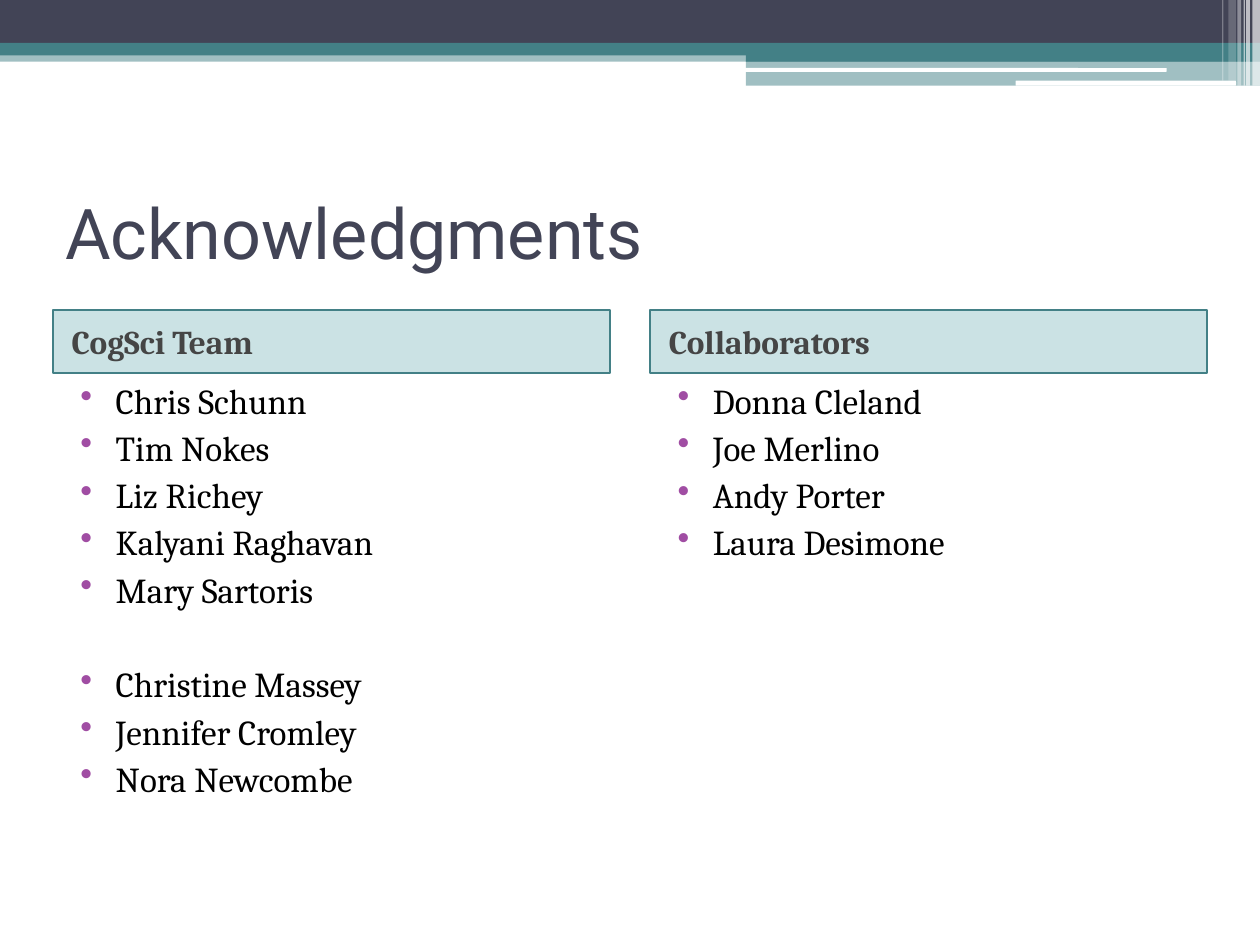
from lxml import etree
from pptx import Presentation
from pptx import util as u
from pptx.dml.color import RGBColor
from pptx.enum import shapes, text
from pptx.oxml.ns import qn

NAVY = RGBColor(0x42, 0x44, 0x56)
TEAL = RGBColor(0x43, 0x80, 0x86)
HEADER_TEAL = RGBColor(0x32, 0x8E, 0x97)
PURPLE = RGBColor(0xA0, 0x4D, 0xA3)
GRAY = RGBColor(0x45, 0x45, 0x45)
BLACK = RGBColor(0, 0, 0)
WHITE = RGBColor(0xFF, 0xFF, 0xFF)

RECTANGLE = shapes.MSO_SHAPE.RECTANGLE
ROUNDED = shapes.MSO_SHAPE.ROUNDED_RECTANGLE
SPACE_BEFORE = 3
NAME_LINE = 27  # height of one list line in points, spacing included

# left, top, width, height, colour, opacity in percent, preset
BANDS = [
    (0, 0.4, 10, 0.09, TEAL, 50, RECTANGLE),
    (0, 0, 10, 0.34, NAVY, 100, RECTANGLE),
    (0, 0.34, 10, 0.1, TEAL, 100, RECTANGLE),
    (5.92, 0.39, 4.08, 0.1, TEAL, 100, RECTANGLE),
    (5.92, 0.48, 4.08, 0.2, TEAL, 50, RECTANGLE),
    (5.91, 0.54, 3.35, 0.03, WHITE, 100, ROUNDED),
    (8.06, 0.64, 1.75, 0.04, WHITE, 100, ROUNDED),
]
# left, width, height, opacity in percent
STRIPES = [
    (9.94, 0.06, 0.68, 65),
    (9.89, 0.03, 0.68, 65),
    (9.87, 0.01, 0.68, 60),
    (9.82, 0.03, 0.68, 40),
    (9.75, 0.06, 0.64, 20),
    (9.7, 0.01, 0.64, 30),
]
# left edge, heading, groups of names
COLUMNS = [
    (0.42, "CogSci Team", [
        ["Chris Schunn", "Tim Nokes", "Liz Richey", "Kalyani Raghavan", "Mary Sartoris"],
        ["Christine Massey", "Jennifer Cromley", "Nora Newcombe"],
    ]),
    (5.16, "Collaborators", [
        ["Donna Cleland", "Joe Merlino", "Andy Porter", "Laura Desimone"],
    ]),
]
COLUMN_WIDTH = 4.42


def add_box(slide, left, top, width, height, color, opacity=100, preset=RECTANGLE, line=None):
    shape = slide.shapes.add_shape(preset, u.Inches(left), u.Inches(top),
                                   u.Inches(width), u.Inches(height))
    shape.shadow.inherit = False
    shape.fill.solid()
    shape.fill.fore_color.rgb = color
    if opacity < 100:
        color_element = shape.fill._xPr.find(qn("a:solidFill"))[0]
        etree.SubElement(color_element, qn("a:alpha"), val=str(opacity * 1000))
    if line is None:
        shape.line.fill.background()
    else:
        shape.line.color.rgb = line
        shape.line.width = u.Pt(1)
    return shape


def add_text_box(slide, left, top, width, height):
    return slide.shapes.add_textbox(u.Inches(left), u.Inches(top),
                                    u.Inches(width), u.Inches(height))


def prepare_frame(shape, anchor):
    frame = shape.text_frame
    frame.word_wrap = True
    frame.vertical_anchor = anchor
    return frame


def write(paragraph, content, *, size, font, color, bold=False, before=0,
          margin=0, indent=0, bullet_color=None):
    run = paragraph.add_run()
    run.text = content
    run.font.size = u.Pt(size)
    run.font.name = font
    run.font.bold = bold
    run.font.color.rgb = color
    paragraph.alignment = text.PP_ALIGN.LEFT
    paragraph.space_before = u.Pt(before)
    properties = paragraph._p.get_or_add_pPr()
    properties.set("marL", str(u.Inches(margin)))
    properties.set("indent", str(u.Inches(indent)))
    if bullet_color is not None:
        bullet = etree.SubElement(properties, qn("a:buClr"))
        etree.SubElement(bullet, qn("a:srgbClr"), val=str(bullet_color))
        etree.SubElement(properties, qn("a:buChar"), char="•")


def add_heading(slide, left, content):
    shape = add_box(slide, left, 2.46, COLUMN_WIDTH, 0.5, HEADER_TEAL, 25, line=TEAL)
    frame = prepare_frame(shape, text.MSO_ANCHOR.MIDDLE)
    write(frame.paragraphs[0], content, size=19, font="Cambria", color=GRAY,
          bold=True, before=SPACE_BEFORE, margin=0.05)


def add_names(slide, left, groups):
    shape = add_text_box(slide, left, 2.96, COLUMN_WIDTH, 4.25)
    frame = prepare_frame(shape, text.MSO_ANCHOR.TOP)
    for group_index, group in enumerate(groups):
        for name_index, name in enumerate(group):
            first = group_index == name_index == 0
            paragraph = frame.paragraphs[0] if first else frame.add_paragraph()
            # A later group starts one line further down
            starts_group = group_index > 0 and name_index == 0
            before = SPACE_BEFORE + (NAME_LINE if starts_group else 0)
            write(paragraph, name, size=20, font="Cambria", color=BLACK, before=before,
                  margin=0.4, indent=-0.28, bullet_color=PURPLE)


def add_title(slide, content):
    shape = add_text_box(slide, 0.42, 1.25, 9.17, 1.17)
    frame = prepare_frame(shape, text.MSO_ANCHOR.MIDDLE)
    write(frame.paragraphs[0], content, size=40, font="Roboto", color=NAVY)


def main():
    presentation = Presentation()
    presentation.slide_width = u.Inches(10)
    presentation.slide_height = u.Inches(7.5)
    slide = presentation.slides.add_slide(presentation.slide_layouts[6])

    # Decorated top edge
    for band in BANDS:
        add_box(slide, *band)
    for left, width, height, opacity in STRIPES:
        add_box(slide, left, 0, width, height, WHITE, opacity)

    # Title and the two columns
    add_title(slide, "Acknowledgments")
    for left, heading, groups in COLUMNS:
        add_heading(slide, left, heading)
        add_names(slide, left, groups)

    presentation.save("out.pptx")


if __name__ == "__main__":
    main()
